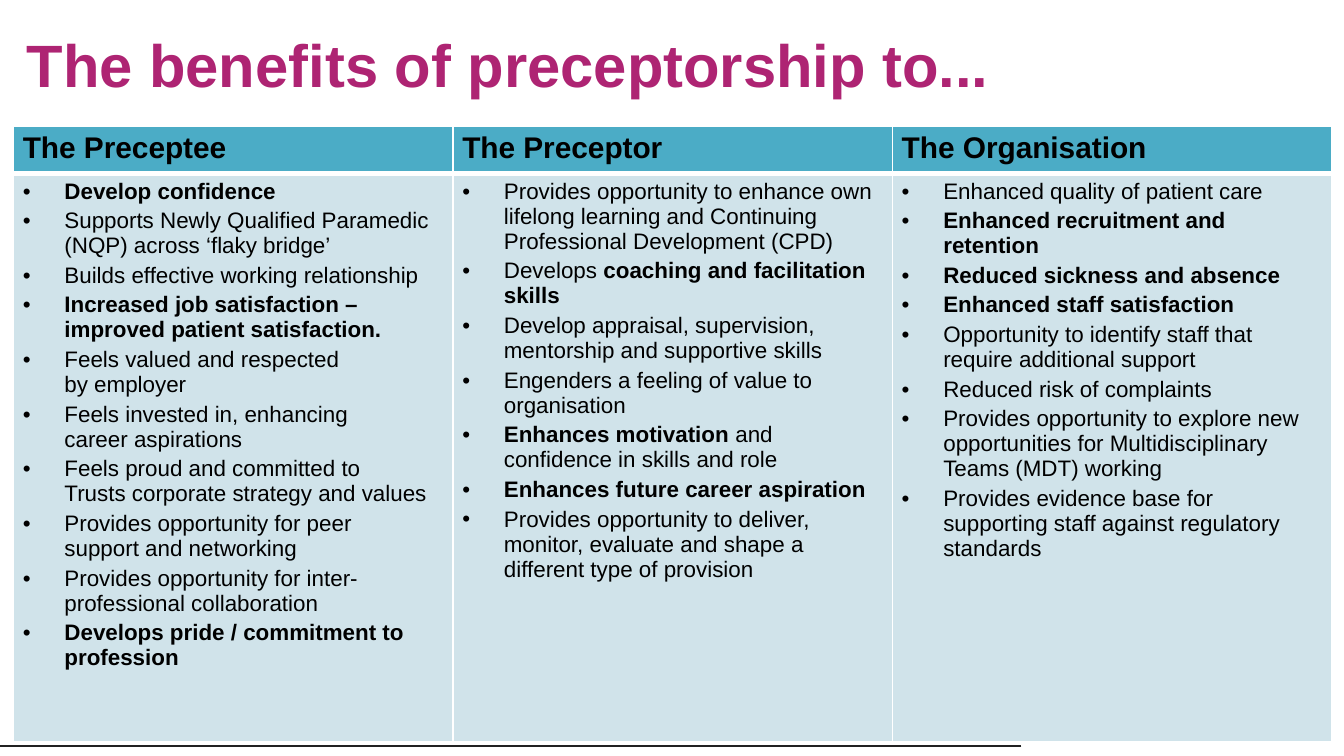
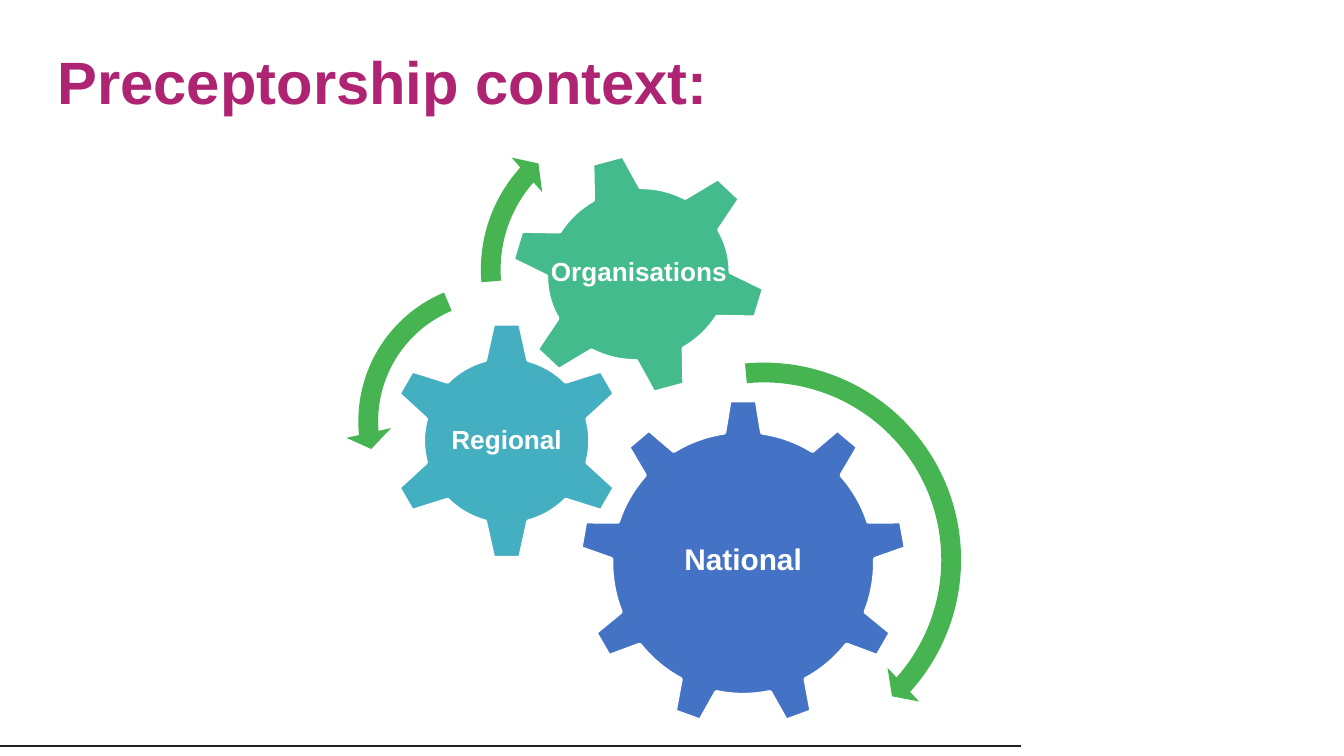
import math

import lxml.etree
import pptx
import pptx.dml.color
import pptx.enum.shapes
import pptx.enum.text
import pptx.oxml.ns
import pptx.util

Inches = pptx.util.Inches
Pt = pptx.util.Pt
SHAPES = pptx.enum.shapes.MSO_SHAPE

FONT = "Arial"
PLUM, BLACK, WHITE, RULE = "AE2473", "000000", "FFFFFF", "212121"
HEADER_FILL, BODY_FILL = "4BACC6", "D0E3EA"
BLUE, TEAL, MINT, GREEN = "4472C4", "43AFC0", "43BB8D", "45B451"

BENEFITS = {
    "The Preceptee": [
        "**Develop_confidence**",
        "Supports Newly Qualified Paramedic (NQP) across ‘flaky bridge’",
        "Builds_effective_working_relationship",
        "**Increased job satisfaction – improved_patient_satisfaction.**",
        "Feels valued and respected by_employer",
        "Feels invested in, enhancing career_aspirations",
        "Feels proud and committed to Trusts_corporate_strategy and_values",
        "Provides opportunity for peer support_and_networking",
        "Provides opportunity for inter-professional_collaboration",
        "**Develops pride / commitment_to profession**",
    ],
    "The Preceptor": [
        "Provides opportunity to enhance own lifelong_learning and Continuing "
        "Professional Development (CPD)",
        "Develops_**coaching and facilitation skills**",
        "Develop appraisal, supervision, mentorship and_supportive skills",
        "Engenders a feeling of value to organisation",
        "**Enhances motivation**_and confidence in skills and_role",
        "**Enhances future career aspiration**",
        "Provides opportunity to deliver, monitor, evaluate_and shape a "
        "different type of provision",
    ],
    "The Organisation": [
        "Enhanced quality of patient care",
        "**Enhanced recruitment and retention**",
        "**Reduced sickness and absence**",
        "**Enhanced staff satisfaction**",
        "Opportunity to identify staff that require additional support",
        "Reduced risk of complaints",
        "Provides opportunity to explore new opportunities for "
        "Multidisciplinary Teams (MDT) working",
        "Provides evidence base for supporting staff against regulatory standards",
    ],
}


def color(value):
    """Turn a hex string into a colour."""
    return pptx.dml.color.RGBColor.from_string(value)


def add_element(parent, tag, **attributes):
    """Append a DrawingML element to a parent."""
    element = lxml.etree.SubElement(parent, pptx.oxml.ns.qn(tag))
    for name, value in attributes.items():
        element.set(name, str(value))
    return element


def style_font(font, size, value, bold=None):
    """Apply the deck font to a font object."""
    font.name = FONT
    font.size = Pt(size)
    font.color.rgb = color(value)
    font.bold = bold


def add_text(slide, text, left, top, width, height, size, value):
    """Add a bold one-line text box, centred vertically."""
    box = slide.shapes.add_textbox(Inches(left), Inches(top), Inches(width), Inches(height))
    frame = box.text_frame
    frame.word_wrap = True
    frame.vertical_anchor = pptx.enum.text.MSO_ANCHOR.MIDDLE
    frame.text = text
    style_font(frame.paragraphs[0].font, size, value, True)


def add_titled_slide(presentation, title, left, top, width):
    """Add a slide with its title and the rule at the foot."""
    slide = presentation.slides.add_slide(presentation.slide_layouts[6])
    rule = slide.shapes.add_connector(
        pptx.enum.shapes.MSO_CONNECTOR.STRAIGHT,
        Inches(7.6), Inches(5.55), Inches(0), Inches(5.55))
    rule.line.color.rgb = color(RULE)
    rule.line.width = Pt(0.75)
    add_element(rule._element.spPr, "a:effectLst")
    add_text(slide, title, left, top, width, 0.94, 32, PLUM)
    return slide


def style_cell(cell, fill, top_width, bottom_width):
    """Set the margins, white borders and fill of a cell."""
    cell.margin_left = cell.margin_right = Inches(0.07)
    cell.margin_top = cell.margin_bottom = Inches(0.04)
    properties = cell._tc.get_or_add_tcPr()
    widths = {"a:lnL": 1, "a:lnR": 1, "a:lnT": top_width, "a:lnB": bottom_width}
    for tag, width in widths.items():
        border = add_element(properties, tag, w=Pt(width))
        add_element(add_element(border, "a:solidFill"), "a:srgbClr", val=WHITE)
    cell.fill.solid()
    cell.fill.fore_color.rgb = color(fill)


def fill_bullet(paragraph, text):
    """Write a bulleted line: ** switches bold, _ is a no-break space."""
    properties = paragraph._p.get_or_add_pPr()
    properties.set("marL", str(Inches(0.31)))
    properties.set("indent", str(-Inches(0.31)))
    add_element(add_element(properties, "a:buClr"), "a:srgbClr", val=BLACK)
    add_element(properties, "a:buFont", typeface=FONT)
    add_element(properties, "a:buChar", char="•")
    style_font(paragraph.font, 12, BLACK)
    for index, part in enumerate(text.replace("_", chr(160)).split("**")):
        if part:
            run = paragraph.add_run()
            run.text = part
            run.font.bold = index % 2 == 1


def add_benefits_table(slide):
    """Add the table with one column of benefits per audience."""
    frame = slide.shapes.add_table(
        2, len(BENEFITS), Inches(0.1), Inches(0.94), Inches(9.81), Inches(4.58))
    table = frame.table
    table.horz_banding = False
    table.rows[0].height = Inches(0.35)
    table.rows[1].height = Inches(4.23)
    for column, (audience, benefits) in enumerate(BENEFITS.items()):
        header, body = table.cell(0, column), table.cell(1, column)
        style_cell(header, HEADER_FILL, 1, 3)
        style_cell(body, BODY_FILL, 3, 1)
        header.text = audience
        style_font(header.text_frame.paragraphs[0].font, 16, BLACK, True)
        for index, benefit in enumerate(benefits):
            if index == 0:
                paragraph = body.text_frame.paragraphs[0]
            else:
                paragraph = body.text_frame.add_paragraph()
                paragraph.space_before = Pt(2.4)
            fill_bullet(paragraph, benefit)


def gear_points(teeth, tip, root, tip_half, root_half):
    """List the outline of an upright gear around the origin."""
    radius = math.hypot(root, root_half)
    edge = math.atan2(root_half, root)
    step = 2 * math.pi / teeth
    points = []
    for tooth in range(teeth):
        angle = tooth * step
        for across, out in ((-root_half, root), (-tip_half, tip), (tip_half, tip)):
            points.append((across * math.cos(angle) + out * math.sin(angle),
                           across * math.sin(angle) - out * math.cos(angle)))
        for part in range(8):
            turn = angle + edge + (step - 2 * edge) * part / 8
            points.append((radius * math.sin(turn), -radius * math.cos(turn)))
    return points


def add_gear(slide, center, outline, fill, label="", size=14, stretch=1, turn=0):
    """Draw a gear, stretched and then turned by degrees, with a label."""
    cosine, sine = math.cos(math.radians(turn)), math.sin(math.radians(turn))
    points = []
    for x, y in outline:
        x *= stretch
        points.append((Inches(center[0] + x * cosine - y * sine),
                       Inches(center[1] + x * sine + y * cosine)))
    builder = slide.shapes.build_freeform(*points[0])
    builder.add_line_segments(points[1:], close=True)
    gear = builder.convert_to_shape()
    gear.shadow.inherit = False
    gear.fill.solid()
    gear.fill.fore_color.rgb = color(fill)
    gear.line.color.rgb = color(WHITE)
    gear.line.width = Pt(2)
    if label:
        frame = gear.text_frame
        frame.margin_left = frame.margin_right = 0
        frame.margin_top = frame.margin_bottom = 0
        frame.vertical_anchor = pptx.enum.text.MSO_ANCHOR.MIDDLE
        frame.text = label
        paragraph = frame.paragraphs[0]
        paragraph.alignment = pptx.enum.text.PP_ALIGN.CENTER
        paragraph.line_spacing = 0.9
        style_font(paragraph.font, size, WHITE, True)


def add_turn_arrow(slide, kind, left, top, size, percentages):
    """Add a green arrow that shows which way a gear turns."""
    arrow = slide.shapes.add_shape(
        kind, Inches(left), Inches(top), Inches(size), Inches(size))
    for index, percentage in enumerate(percentages):
        arrow.adjustments[index] = percentage / 100
    arrow.shadow.inherit = False
    arrow.fill.solid()
    arrow.fill.fore_color.rgb = color(GREEN)
    arrow.line.fill.background()


def add_context_gears(slide):
    """Add the three linked gears and their arrows."""
    national = gear_points(9, 1.21, 0.97, 0.1, 0.14)
    regional = gear_points(6, 0.87, 0.6, 0.1, 0.16)
    organisations = gear_points(6, 0.88, 0.62, 0.11, 0.17)
    add_gear(slide, (5.53, 4.19), national, BLUE, "National", 16)
    add_gear(slide, (3.77, 3.28), regional, TEAL, "Regional")
    add_gear(slide, (4.75, 2.04), organisations, MINT, stretch=1.07, turn=-15)
    add_turn_arrow(slide, SHAPES.CIRCULAR_ARROW, 4.12, 2.6, 3.13,
                   (4.7, 299, 2513.1, 15867.9, 5.5))
    add_turn_arrow(slide, SHAPES.LEFT_CIRCULAR_ARROW, 2.57, 2, 2.27,
                   (6.5, 430, 10489.1, 14837.8, 7.5))
    add_turn_arrow(slide, SHAPES.CIRCULAR_ARROW, 3.48, 0.78, 2.45,
                   (6, 394.1, 13313.8, 10508.2, 7))
    add_text(slide, "Organisations", 4, 1.85, 6.78, 0.34, 14, WHITE)


def main():
    """Build and save the presentation."""
    presentation = pptx.Presentation()
    presentation.slide_width = Inches(10)
    presentation.slide_height = presentation.slide_width * 9 // 16
    add_benefits_table(add_titled_slide(
        presentation, "The benefits of preceptorship to...", 0.1, 0, 9.81))
    add_context_gears(add_titled_slide(
        presentation, "Preceptorship context:", 0.33, 0.13, 9))
    presentation.save("out.pptx")


if __name__ == "__main__":
    main()
